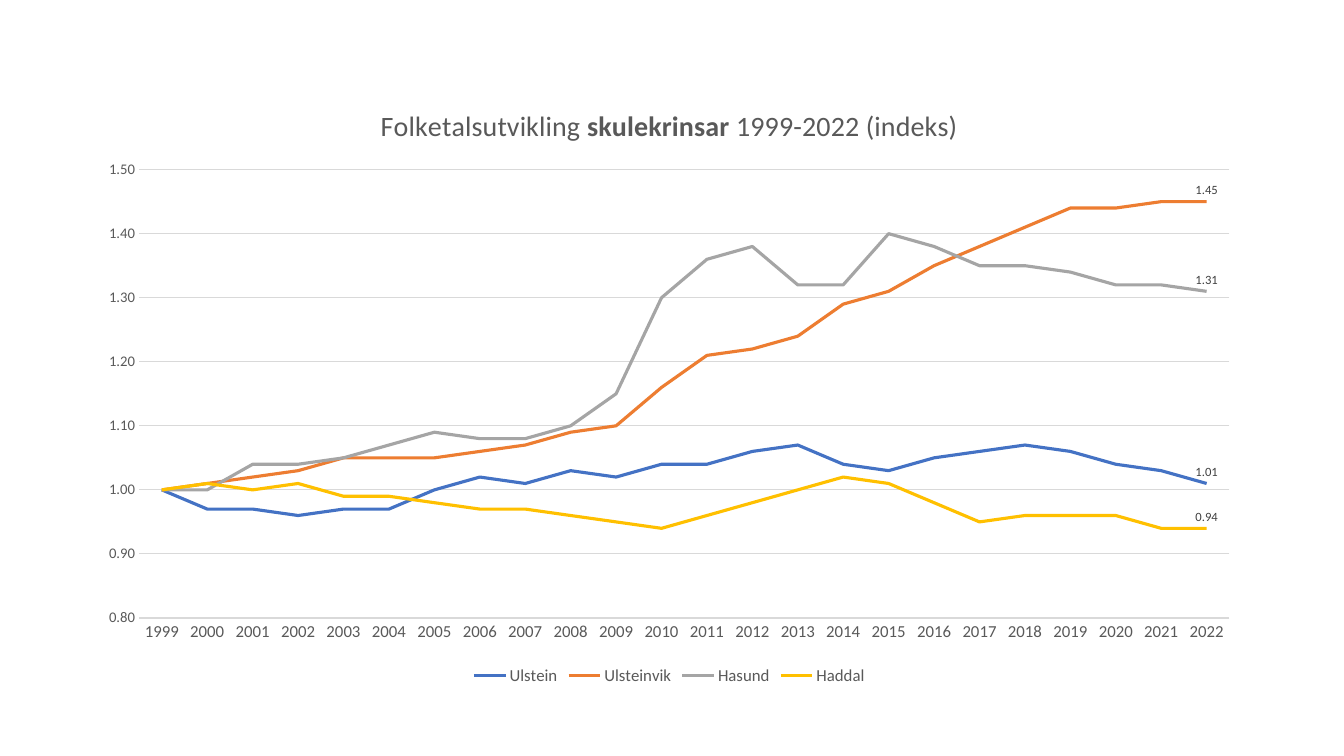
from pptx import Presentation
from pptx.chart.data import CategoryChartData
from pptx.dml.color import RGBColor
from pptx.enum.chart import (XL_CHART_TYPE, XL_LABEL_POSITION, XL_LEGEND_POSITION,
                             XL_MARKER_STYLE, XL_TICK_MARK)
from pptx.util import Cm, Pt

LINE_CHART = XL_CHART_TYPE.LINE
LABEL_ABOVE = XL_LABEL_POSITION.ABOVE
LEGEND_BOTTOM = XL_LEGEND_POSITION.BOTTOM
NO_MARKER = XL_MARKER_STYLE.NONE
NO_TICK = XL_TICK_MARK.NONE

GREY_TEXT = RGBColor(0x59, 0x59, 0x59)
DARK_TEXT = RGBColor(0x40, 0x40, 0x40)
GRID_GREY = RGBColor(0xD9, 0xD9, 0xD9)
BLUE = RGBColor(0x44, 0x72, 0xC4)
ORANGE = RGBColor(0xED, 0x7D, 0x31)
GREY = RGBColor(0xA5, 0xA5, 0xA5)
YELLOW = RGBColor(0xFF, 0xC0, 0x00)

YEARS = [str(year) for year in range(1999, 2023)]

# School district: line colour and population index per year
DISTRICTS = {
    "Ulstein": (BLUE, [
        1.00, 0.97, 0.97, 0.96, 0.97, 0.97, 1.00, 1.02, 1.01, 1.03, 1.02, 1.04,
        1.04, 1.06, 1.07, 1.04, 1.03, 1.05, 1.06, 1.07, 1.06, 1.04, 1.03, 1.01]),
    "Ulsteinvik": (ORANGE, [
        1.00, 1.01, 1.02, 1.03, 1.05, 1.05, 1.05, 1.06, 1.07, 1.09, 1.10, 1.16,
        1.21, 1.22, 1.24, 1.29, 1.31, 1.35, 1.38, 1.41, 1.44, 1.44, 1.45, 1.45]),
    "Hasund": (GREY, [
        1.00, 1.00, 1.04, 1.04, 1.05, 1.07, 1.09, 1.08, 1.08, 1.10, 1.15, 1.30,
        1.36, 1.38, 1.32, 1.32, 1.40, 1.38, 1.35, 1.35, 1.34, 1.32, 1.32, 1.31]),
    "Haddal": (YELLOW, [
        1.00, 1.01, 1.00, 1.01, 0.99, 0.99, 0.98, 0.97, 0.97, 0.96, 0.95, 0.94,
        0.96, 0.98, 1.00, 1.02, 1.01, 0.98, 0.95, 0.96, 0.96, 0.96, 0.94, 0.94]),
}


class IndexSlide:
    """Holds the text style and the current slide."""

    font_name = "Calibri"

    def __init__(self, slide):
        self.slide = slide

    def style(self, font, size, color=GREY_TEXT, bold=False):
        font.name = self.font_name
        font.size = Pt(size)
        font.bold = bold
        font.color.rgb = color

    def line_chart(self, left, top, width, height, years, districts):
        data = CategoryChartData(number_format="0.00")
        data.categories = years
        for name, (_, index_values) in districts.items():
            data.add_series(name, index_values)
        chart = self.slide.shapes.add_chart(
            LINE_CHART, left, top, width, height, data).chart
        self.style(chart.font, 10)
        chart.plots[0].vary_by_categories = False
        for district in chart.plots[0].series:
            self.district_line(district, districts[district.name][0])
        return chart

    def district_line(self, district, color):
        district.smooth = False
        district.marker.style = NO_MARKER
        district.format.line.color.rgb = color
        district.format.line.width = Pt(2.25)
        district.data_labels.show_value = False
        district.data_labels.number_format = "0.00"
        district.data_labels.number_format_is_linked = False
        last_label = district.points[len(YEARS) - 1].data_label
        self.style(last_label.font, 9, DARK_TEXT)
        last_label.position = LABEL_ABOVE

    def chart_title(self, chart, parts):
        chart.has_title = True
        chart.chart_title.include_in_layout = False
        heading = chart.chart_title.text_frame.paragraphs[0]
        for text, bold in parts:
            run = heading.add_run()
            run.text = text
            self.style(run.font, 20, bold=bold)

    def axes(self, chart, low, high, step):
        year_axis, index_axis = chart.category_axis, chart.value_axis
        for axis, size in ((year_axis, 12), (index_axis, 10.5)):
            axis.major_tick_mark = NO_TICK
            axis.minor_tick_mark = NO_TICK
            self.style(axis.tick_labels.font, size)
        index_axis.minimum_scale = low
        index_axis.maximum_scale = high
        index_axis.major_unit = step
        index_axis.tick_labels.number_format = "0.00"
        index_axis.tick_labels.number_format_is_linked = False
        index_axis.format.line.fill.background()
        for line in (year_axis.format.line, index_axis.major_gridlines.format.line):
            line.color.rgb = GRID_GREY
            line.width = Pt(0.75)

    def legend(self, chart):
        chart.has_legend = True
        chart.legend.position = LEGEND_BOTTOM
        chart.legend.include_in_layout = False
        self.style(chart.legend.font, 12)


def main():
    prs = Presentation()
    prs.slide_width = Cm(33.87)
    prs.slide_height = Cm(19.05)
    page = IndexSlide(prs.slides.add_slide(prs.slide_layouts[6]))

    # Population index by school district
    population = page.line_chart(Cm(2.16), Cm(2.18), Cm(29.41), Cm(15.19),
                                 YEARS, DISTRICTS)
    page.chart_title(population, [("Folketalsutvikling ", False),
                                  ("skulekrinsar", True),
                                  (" 1999-2022 (indeks)", False)])
    page.axes(population, 0.8, 1.5, 0.1)
    page.legend(population)

    prs.save("out.pptx")


if __name__ == "__main__":
    main()
